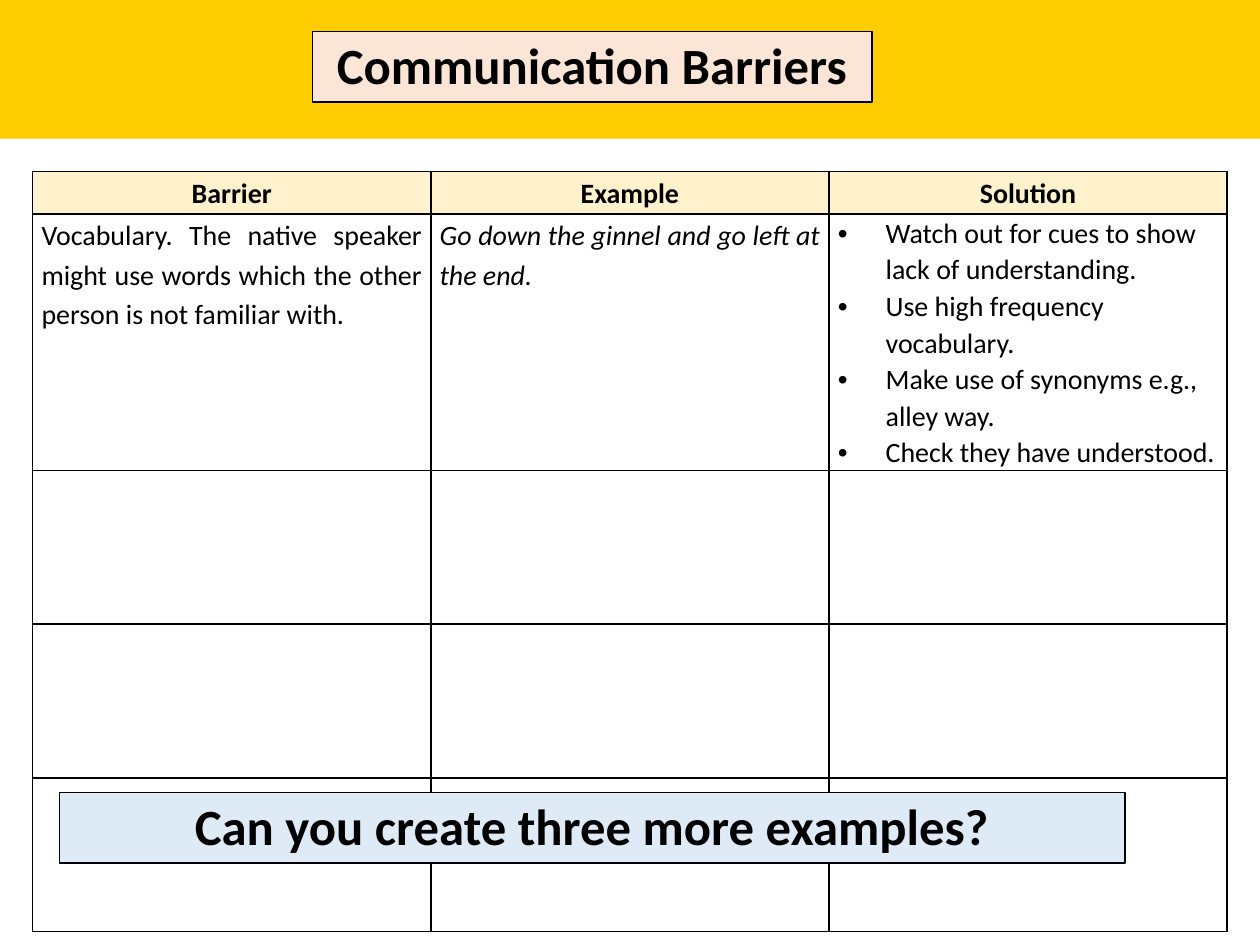
from lxml.etree import SubElement as Sub
from pptx import Presentation
from pptx.dml.color import RGBColor as RGB
from pptx.enum.shapes import MSO_SHAPE as Shape
from pptx.enum.text import MSO_ANCHOR as Anchor, MSO_AUTO_SIZE as Auto, PP_ALIGN as Align
from pptx.oxml.ns import qn
from pptx.util import Inches, Pt

COLORS = {"band": "FFCD00", "title": "FBE5D6", "head": "FFF2CC",
          "task": "DEEBF7", "ink": "000000"}
TITLE = "Communication Barriers"
TASK = "Can you create three more examples?"
HEADS = ["Barrier", "Example", "Solution"]
BARRIER = ("Vocabulary. The native speaker might use words which "
           "the other person is not familiar with.")
EXAMPLE = "Go down the ginnel and go left at the end."
TIPS = ["Watch out for cues to show lack of understanding.",
        "Use high frequency vocabulary.",
        "Make use of synonyms e.g., alley way.",
        "Check they have understood."]
HEIGHTS = [0.34, 2.03] + [1.22] * 3
COL = 3.16


def tint(name):
    return RGB.from_string(COLORS[name])


def write(frame, lines, size=16, bold=False, italic=False, align=Align.LEFT,
          space=1.15, after=0, bullet=False):
    """Fill a text frame, one paragraph a line; 'after' follows the last one."""
    frame.word_wrap = True
    for i, line in enumerate(lines):
        para = frame.paragraphs[0] if i == 0 else frame.add_paragraph()
        props = para._p.get_or_add_pPr()
        if bullet:
            props.set("marL", str(Inches(0.38)))
            props.set("indent", str(-Inches(0.38)))
            Sub(props, qn("a:buFont"), typeface="Arial")
            Sub(props, qn("a:buChar"), char="•")
        para.alignment = align
        para.line_spacing = space
        para.space_before = Pt(0)
        para.space_after = Pt(after if i == len(lines) - 1 else 0)
        run = para.add_run()
        run.text = line
        font = run.font
        font.name, font.size = "Calibri", Pt(size)
        font.bold, font.italic = bold, italic
        font.color.rgb = tint("ink")


def banner(shape, text, fill):
    shape.fill.solid()
    shape.fill.fore_color.rgb = tint(fill)
    shape.line.color.rgb = tint("ink")
    shape.line.width = Pt(0.75)
    frame = shape.text_frame
    frame.auto_size = Auto.NONE
    frame.vertical_anchor = Anchor.BOTTOM
    write(frame, [text], size=29, bold=True, align=Align.CENTER, space=0.9)


def box(slide, left, top, width, height):
    shape = slide.shapes.add_shape(Shape.RECTANGLE, Inches(left), Inches(top),
                                   Inches(width), Inches(height))
    shape.shadow.inherit = False
    return shape


def style(cell, head):
    cell.margin_left = cell.margin_right = Inches(0.07)
    cell.margin_top = cell.margin_bottom = 0
    props = cell._tc.get_or_add_tcPr()
    for side in ("lnL", "lnR", "lnT", "lnB"):
        line = Sub(props, qn(f"a:{side}"), w=str(Pt(1)))
        fill = Sub(line, qn("a:solidFill"))
        Sub(fill, qn("a:srgbClr"), val=COLORS["ink"])
    if head:
        cell.fill.solid()
        cell.fill.fore_color.rgb = tint("head")
    else:
        cell.fill.background()


def add_grid(slide):
    rows, cols = len(HEIGHTS), len(HEADS)
    grid = slide.shapes.add_table(rows, cols, Inches(0.26), Inches(1.36),
                                  Inches(COL * cols), Inches(sum(HEIGHTS))).table
    for col in grid.columns:
        col.width = Inches(COL)
    for r, high in enumerate(HEIGHTS):
        grid.rows[r].height = Inches(high)
        for cell in grid.rows[r].cells:
            style(cell, r == 0)
    for c, head in enumerate(HEADS):
        write(grid.cell(0, c).text_frame, [head], bold=True,
              align=Align.CENTER, after=10)
    write(grid.cell(1, 0).text_frame, [BARRIER], align=Align.JUSTIFY, after=10)
    write(grid.cell(1, 1).text_frame, [EXAMPLE], italic=True,
          align=Align.JUSTIFY, after=10)
    write(grid.cell(1, 2).text_frame, TIPS, space=1.07, after=8, bullet=True)


def main():
    deck = Presentation()
    deck.slide_width, deck.slide_height = Inches(10), Inches(7.5)
    slide = deck.slides.add_slide(deck.slide_layouts[5])

    band = box(slide, 0, 0, 10, 1.1)
    band.fill.solid()
    band.fill.fore_color.rgb = tint("band")
    band.line.fill.background()
    slide.shapes._spTree.insert(2, band._element)  # behind the title

    title = slide.shapes.title
    title.left, title.top = Inches(2.48), Inches(0.25)
    title.width, title.height = Inches(4.44), Inches(0.56)
    banner(title, TITLE, "title")
    add_grid(slide)
    banner(box(slide, 0.47, 6.29, 8.46, 0.56), TASK, "task")
    deck.save("out.pptx")


if __name__ == "__main__":
    main()
